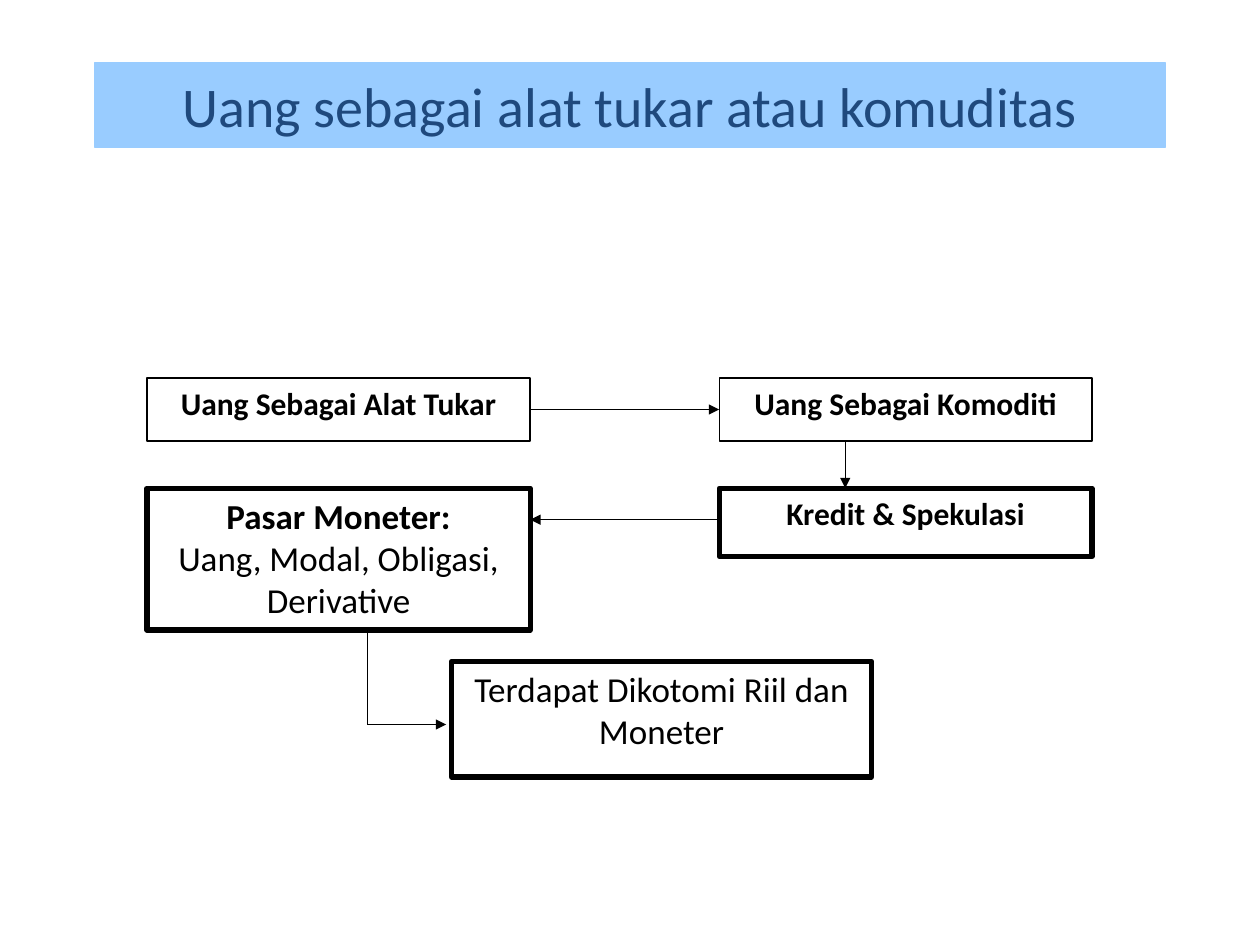
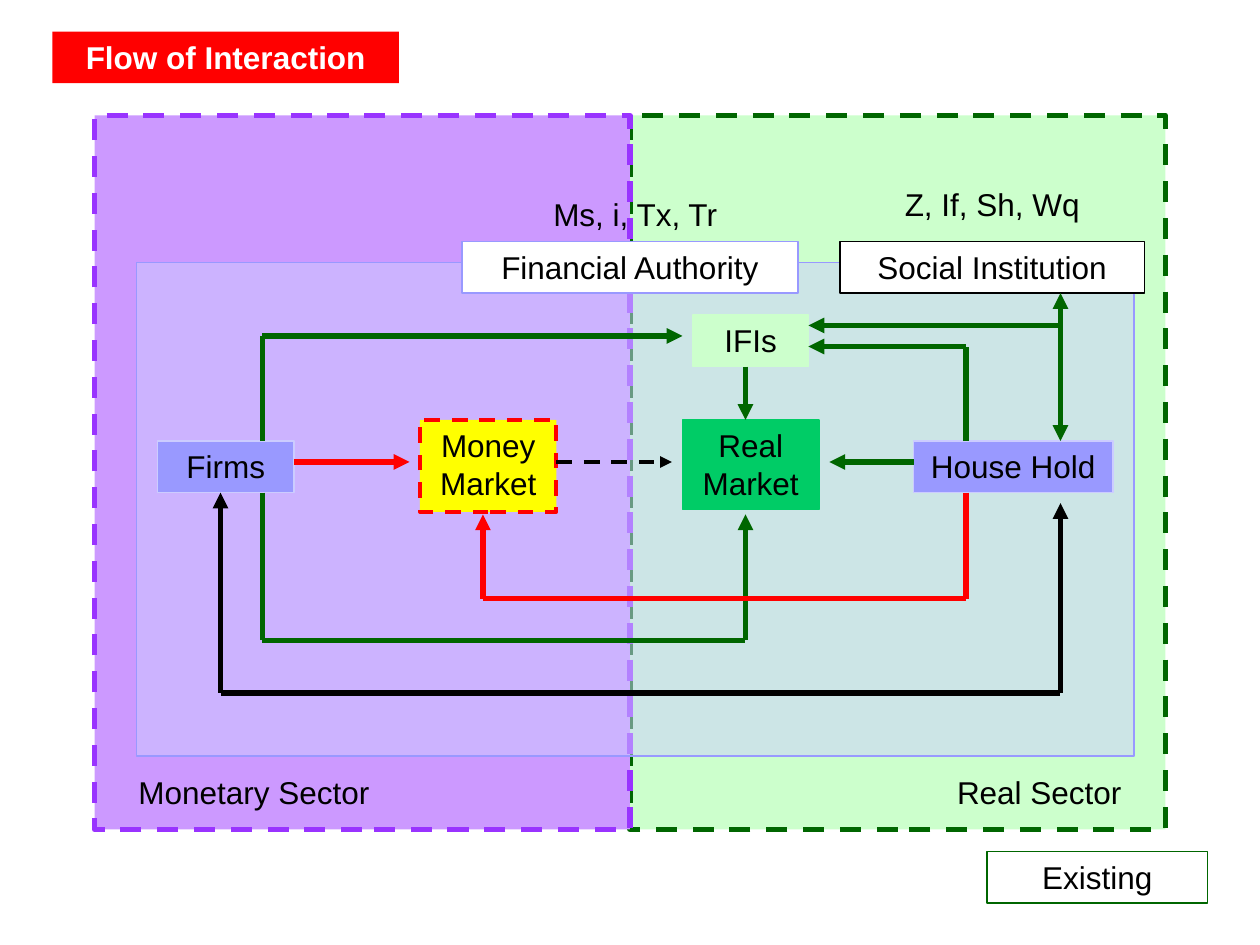
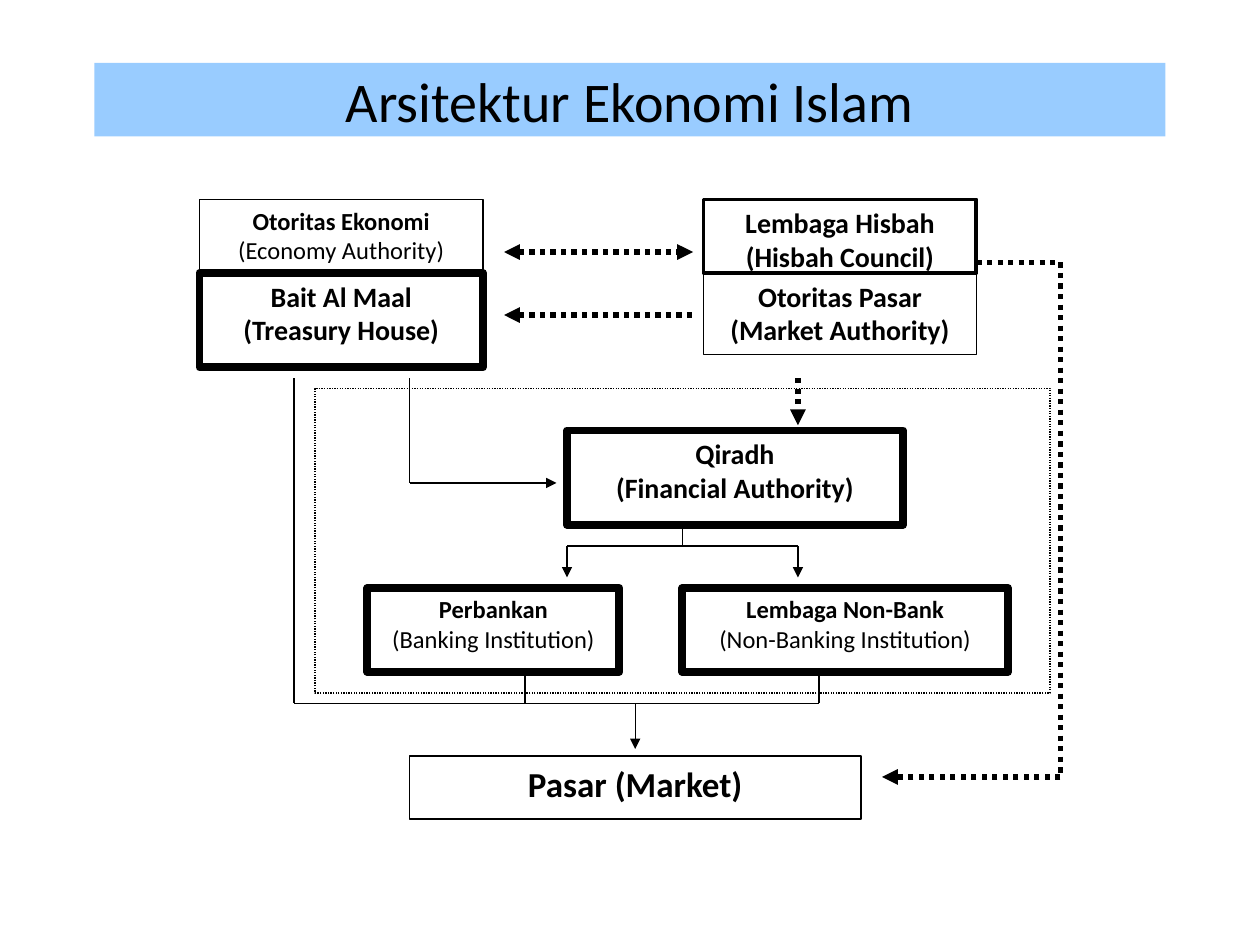
from dataclasses import dataclass
from itertools import pairwise

from lxml.etree import SubElement
from pptx import Presentation
from pptx.dml.color import RGBColor
from pptx.enum.dml import MSO_LINE
from pptx.enum.shapes import MSO_CONNECTOR, MSO_SHAPE
from pptx.enum.text import MSO_ANCHOR, PP_ALIGN
from pptx.oxml.ns import qn
from pptx.util import Pt

BLACK = RGBColor.from_string("000000")
WHITE = RGBColor.from_string("FFFFFF")
NAVY = RGBColor.from_string("1F497D")
SKY = RGBColor.from_string("99CCFF")
RED = RGBColor.from_string("FF0000")
YELLOW = RGBColor.from_string("FFFF00")
GREEN = RGBColor.from_string("006600")
EMERALD = RGBColor.from_string("00CC66")
MINT = RGBColor.from_string("CCFFCC")
VIOLET = RGBColor.from_string("9933FF")
LILAC = RGBColor.from_string("CC99FF")
PERIWINKLE = RGBColor.from_string("9999FF")
LAVENDER = RGBColor.from_string("CCCCFF")

DASH, DOT = MSO_LINE.DASH, MSO_LINE.ROUND_DOT
THIN, MEDIUM, THICK, HEAVY = 0.75, 2.25, 3, 4.5
SMALL, NORMAL, BODY, LARGE, TITLE = 14, 16, 18, 20, 32
START, END, BOTH, PLAIN = ("headEnd",), ("tailEnd",), ("headEnd", "tailEnd"), ()
GAP = 6
STEM = 6 * GAP
LINE_HEIGHT = 29.5

FINE_PEN = (BLACK, THIN, None)
DOTTED_PEN = (BLACK, THICK, DOT)
DASHED_PEN = (BLACK, MEDIUM, DASH)
BLACK_PEN, RED_PEN, GREEN_PEN = ((color, THICK, None) for color in (BLACK, RED, GREEN))

STYLES = {
    "title navy": dict(fill=SKY, line=SKY, color=NAVY, anchor=MSO_ANCHOR.MIDDLE),
    "title black": dict(fill=SKY, anchor=MSO_ANCHOR.MIDDLE),
    "title red": dict(fill=RED, color=WHITE),
    "thin": dict(line=BLACK),
    "medium": dict(line=BLACK, width=MEDIUM),
    "thick": dict(line=BLACK, width=THICK),
    "heavy": dict(line=BLACK, width=HEAVY),
    "dotted": dict(line=BLACK, dash=DOT),
    "real sector": dict(fill=MINT, line=GREEN, width=THICK, dash=DASH),
    "monetary sector": dict(fill=LILAC, line=VIOLET, width=THICK, dash=DASH),
    "economy": dict(fill=LAVENDER, opacity="51000", line=PERIWINKLE),
    "money market": dict(fill=YELLOW, line=RED, width=MEDIUM, dash=DASH),
    "real market": dict(fill=EMERALD, line=EMERALD),
    "actor": dict(fill=PERIWINKLE, line=LAVENDER),
    "ifis": dict(fill=MINT, line=MINT),
    "social": dict(fill=WHITE, line=BLACK),
    "authority": dict(fill=WHITE, line=PERIWINKLE),
    "existing": dict(line=GREEN),
    "label": dict(),
    "label left": dict(align=PP_ALIGN.LEFT),
    "label right": dict(align=PP_ALIGN.RIGHT),
}


class Bold(str):
    pass


@dataclass
class Area:
    left: float
    top: float
    width: float
    height: float

    @property
    def right(self):
        return self.left + self.width

    @property
    def bottom(self):
        return self.top + self.height

    @property
    def center(self):
        return self.left + self.width / 2


BAND = (54, 612)
HALVES = [(BAND[0], BAND[1] / 2), (BAND[0] + BAND[1] / 2, BAND[1] / 2)]
EXCHANGE, COMMODITY = (84, 219), (411, 213)
TREASURY, COUNCIL = (114, 162), (402, 156)

# each row: style, text size, top, height, then (column, lines) for its boxes
MONEY_ROWS = [
    ("title navy", TITLE, 36, 48, [(BAND, ["Uang sebagai alat tukar atau komuditas"])]),
    ("thin", BODY, 216, 36, [
        (EXCHANGE, [Bold("Uang Sebagai Alat Tukar")]),
        (COMMODITY, [Bold("Uang Sebagai Komoditi")]),
    ]),
    ("thick", BODY, 279, 39, [(COMMODITY, [Bold("Kredit & Spekulasi")])]),
    ("thick", LARGE, 279, 81, [(EXCHANGE, [Bold("Pasar Moneter:"), "Uang, Modal, Obligasi, Derivative"])]),
    ("thick", LARGE, 378, 66, [((258, 240), ["Terdapat Dikotomi Riil dan Moneter"])]),
]
FLOW_ROWS = [
    ("real sector", BODY, 66, 408, [(HALVES[1], [])]),
    ("monetary sector", BODY, 66, 408, [(HALVES[0], [])]),
    ("economy", BODY, 150, 282, [((78, 570), [])]),
    ("money market", BODY, 240, 52.5, [((240, 78), ["Money Market"])]),
    ("real market", BODY, 240, 51, [((390, 78), ["Real Market"])]),
    ("actor", BODY, 252, LINE_HEIGHT, [((90, 78), ["Firms"]), ((522, 114), ["House Hold"])]),
    ("title red", BODY, 18, LINE_HEIGHT, [((30, 198), [Bold("Flow of Interaction")])]),
    ("ifis", BODY, 180, LINE_HEIGHT, [((396, 66), ["IFIs"])]),
    ("social", BODY, 138, LINE_HEIGHT, [((480, 174), ["Social Institution"])]),
    ("authority", BODY, 138, LINE_HEIGHT, [((264, 192), ["Financial Authority"])]),
    ("label", BODY, 108, LINE_HEIGHT, [((288, 150), ["Ms, i, Tx, Tr"])]),
    ("label", BODY, 102, LINE_HEIGHT, [((486, 162), ["Z, If, Sh, Wq"])]),
    ("existing", BODY, 486.5, LINE_HEIGHT, [((564, 126), ["Existing"])]),
    ("label left", BODY, 438, LINE_HEIGHT, [((72, 192), ["Monetary Sector"])]),
    ("label right", BODY, 438, LINE_HEIGHT, [((456, 192), ["Real Sector"])]),
]
ISLAMIC_ROWS = [
    ("title black", TITLE, 36, 42, [(BAND, ["Arsitektur Ekonomi Islam"])]),
    ("thin", SMALL, 114, 42, [(TREASURY, [Bold("Otoritas Ekonomi"), "(Economy Authority)"])]),
    ("medium", NORMAL, 114, 42, [(COUNCIL, [Bold("Lembaga Hisbah"), Bold("(Hisbah Council)")])]),
    ("heavy", NORMAL, 156, 54, [(TREASURY, [Bold("Bait Al Maal"), Bold("(Treasury House)")])]),
    ("heavy", NORMAL, 246, 54, [((324, 192), [Bold("Qiradh"), Bold("(Financial Authority)")])]),
    ("heavy", SMALL, 336, 48, [
        ((210, 144), [Bold("Perbankan"), "(Banking Institution)"]),
        ((390, 186), [Bold("Lembaga Non-Bank"), "(Non-Banking Institution)"]),
    ]),
    ("thin", LARGE, 432, 36, [((234, 258), [Bold("Pasar (Market)")])]),
    ("thin", NORMAL, 156, 46.5, [(COUNCIL, [Bold("Otoritas Pasar (Market Authority)")])]),
    ("dotted", SMALL, 222, 174, [((180, 420), [])]),
]


# each route: pen, arrowheads, first direction, start x, start y, then one coordinate per turn
def money_routes(at):
    exchange, commodity = at["Uang Sebagai Alat Tukar"], at["Uang Sebagai Komoditi"]
    credit, monetary = at["Kredit & Spekulasi"], at["Pasar Moneter:"]
    dichotomy = at["Terdapat Dikotomi Riil dan Moneter"]
    return [
        (FINE_PEN, END, "across", exchange.right, exchange.top + 18, commodity.left),
        (FINE_PEN, END, "down", commodity.left + 2 * STEM, commodity.bottom, credit.top),
        (FINE_PEN, END, "across", credit.left, credit.top + 18, monetary.right),
        (FINE_PEN, END, "down", 210, monetary.bottom, dichotomy.top + STEM, dichotomy.left - 3),
    ]


def flow_routes(at):
    firms, money, real = at["Firms"], at["Money Market"], at["Real Market"]
    home, ifis, social = at["House Hold"], at["IFIs"], at["Social Institution"]
    wire = firms.top + 2 * GAP
    firms_green = firms.left + 10 * GAP
    home_inner, home_outer = home.left + 5 * GAP, home.left + 14 * GAP
    real_stem, money_stem = real.left + STEM, money.left + STEM
    return [
        (RED_PEN, END, "across", firms.right, wire, money.left - GAP),
        (BLACK_PEN, BOTH, "down", firms.left + STEM, firms.bottom, 396, home_outer, home.bottom + GAP),
        (GREEN_PEN, END, "down", home_inner, home.top, ifis.top + 3 * GAP, ifis.right),
        (DASHED_PEN, END, "across", money.right, wire, real.left - GAP),
        (GREEN_PEN, END, "down", firms_green, firms.bottom, 366, real_stem, real.bottom + 3),
        (GREEN_PEN, END, "across", home.left, wire, real.right + GAP),
        (GREEN_PEN, END, "down", firms_green, firms.top, ifis.top + 2 * GAP, ifis.left - GAP),
        (GREEN_PEN, END, "down", real_stem, ifis.bottom, real.top),
        (RED_PEN, END, "down", home_inner, home.bottom, 342, money_stem, money.bottom + 1.5),
        (GREEN_PEN, BOTH, "down", home_outer, home.top, social.bottom),
        (GREEN_PEN, END, "across", home_outer, ifis.top + GAP, ifis.right),
    ]


def islamic_routes(at):
    treasury, council, qiradh = at["Bait Al Maal"], at["Lembaga Hisbah"], at["Qiradh"]
    bank, other, market = at["Perbankan"], at["Lembaga Non-Bank"], at["Pasar (Market)"]
    below = treasury.bottom + GAP
    fork = qiradh.bottom + 2 * GAP
    merge = bank.bottom + 3 * GAP
    exchange = (treasury.right + 2 * GAP, council.left - GAP)
    return [
        (FINE_PEN, END, "down", treasury.left + 120, below, qiradh.top + 5 * GAP, qiradh.left - GAP),
        (FINE_PEN, PLAIN, "down", other.left, qiradh.bottom, fork),
        (FINE_PEN, BOTH, "down", qiradh.left, bank.top - GAP, fork, council.left + 54, other.top - GAP),
        (FINE_PEN, PLAIN, "down", treasury.left + 54, below, merge, other.left + 78, other.bottom),
        (FINE_PEN, PLAIN, "down", bank.left + 90, bank.bottom, merge),
        (FINE_PEN, END, "down", market.center, merge, market.top - 4),
        (DOTTED_PEN, BOTH, "across", exchange[0], council.top + 5 * GAP, exchange[1]),
        (DOTTED_PEN, START, "across", exchange[0], treasury.top + 4 * GAP, exchange[1]),
        (DOTTED_PEN, END, "down", council.left + 54, below, qiradh.top - 3),
        (DOTTED_PEN, END, "across", council.right, council.bottom - GAP, 606,
         market.top + 2 * GAP, market.right + 2 * GAP),
    ]


SLIDES = [
    ("Calibri", MONEY_ROWS, money_routes),
    ("Arial", FLOW_ROWS, flow_routes),
    ("Calibri", ISLAMIC_ROWS, islamic_routes),
]


def set_line(line, color, width, dash):
    line.color.rgb = color
    for name, value in {"width": Pt(width), "dash_style": dash}.items():
        setattr(line, name, value)


def add_box(slide, font_name, area, style, size, lines):
    look = STYLES[style]
    box = slide.shapes.add_shape(
        MSO_SHAPE.RECTANGLE, Pt(area.left), Pt(area.top), Pt(area.width), Pt(area.height))
    box.shadow.inherit = False
    if "fill" in look:
        box.fill.solid()
        box.fill.fore_color.rgb = look["fill"]
    else:
        box.fill.background()
    if "opacity" in look:
        color = box._element.spPr.find(qn("a:solidFill"))[0]
        SubElement(color, qn("a:alpha"), val=look["opacity"])
    if "line" in look:
        set_line(box.line, look["line"], look.get("width", THIN), look.get("dash"))
    else:
        box.line.fill.background()

    frame = box.text_frame
    frame.word_wrap = True
    frame.vertical_anchor = look.get("anchor", MSO_ANCHOR.TOP)
    for index, line in enumerate(lines):
        paragraph = frame.add_paragraph() if index else frame.paragraphs[0]
        paragraph.alignment = look.get("align", PP_ALIGN.CENTER)
        run = paragraph.add_run()
        run.text = str(line)
        run.font.color.rgb = look.get("color", BLACK)
        values = {"name": font_name, "size": Pt(size), "bold": isinstance(line, Bold)}
        for name, value in values.items():
            setattr(run.font, name, value)


def add_route(slide, pen, heads, direction, x, y, *turns):
    points = [(x, y)]
    across = direction == "across"
    for turn in turns:
        x, y = (turn, y) if across else (x, turn)
        points.append((x, y))
        across = not across
    segments = list(pairwise(points))
    for index, (start, end) in enumerate(segments):
        segment = slide.shapes.add_connector(MSO_CONNECTOR.STRAIGHT, *map(Pt, start + end))
        set_line(segment.line, *pen)
        properties = segment._element.spPr
        ends = {"headEnd": index == 0, "tailEnd": index == len(segments) - 1}
        for head in heads:
            if ends[head]:
                SubElement(properties.find(qn("a:ln")), qn(f"a:{head}"), type="triangle")
        SubElement(properties, qn("a:effectLst"))


def main():
    deck = Presentation()
    deck.slide_width, deck.slide_height = Pt(720), Pt(540)
    for font_name, rows, routes in SLIDES:
        slide = deck.slides.add_slide(deck.slide_layouts[6])
        at = {}
        for style, size, top, height, boxes in rows:
            for (left, width), lines in boxes:
                area = Area(left, top, width, height)
                at[lines[0] if lines else style] = area
                add_box(slide, font_name, area, style, size, lines)
        for route in routes(at):
            add_route(slide, *route)
    deck.save("out.pptx")


if __name__ == "__main__":
    main()
